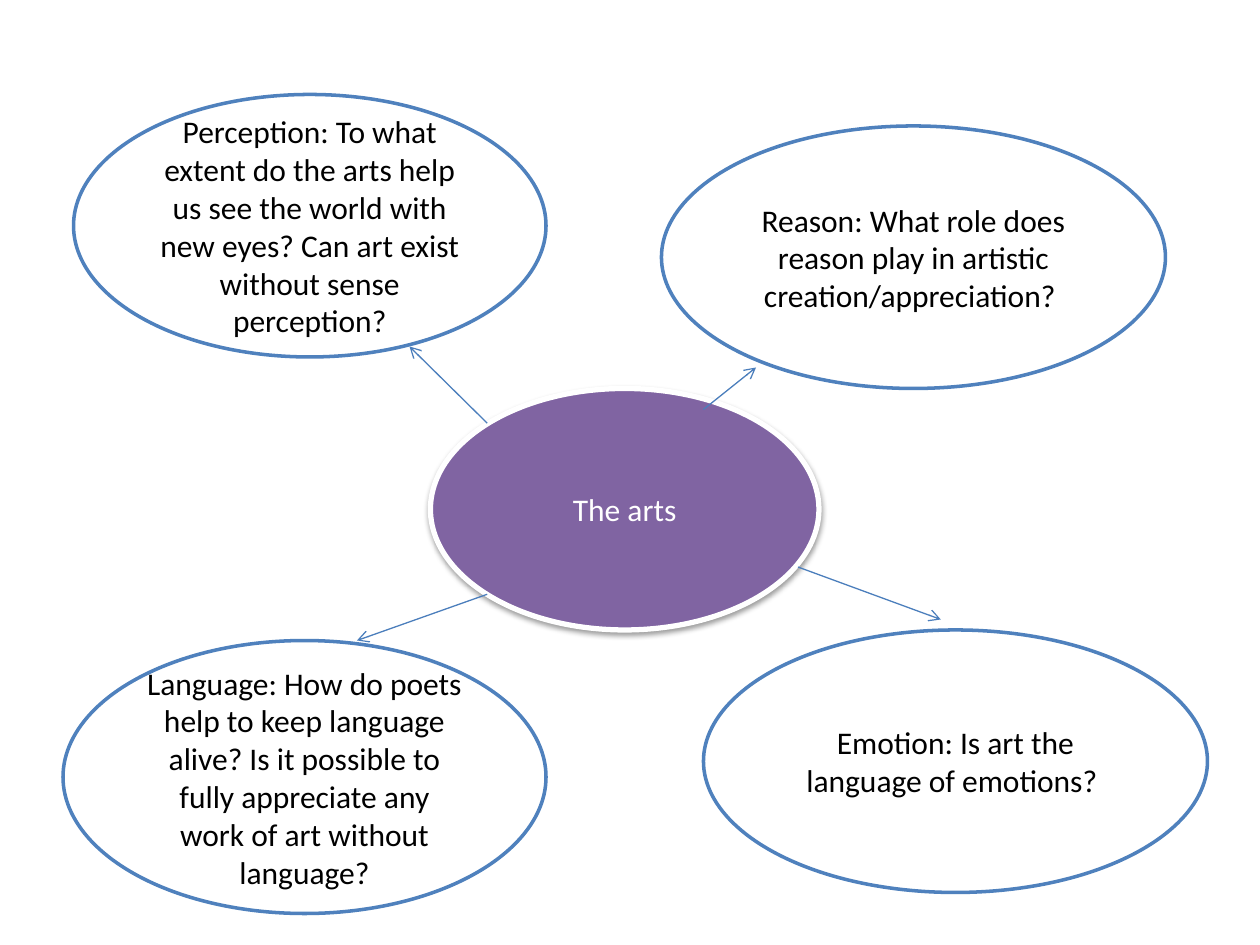
import pptx
import pptx.dml.color
import pptx.enum.shapes
import pptx.enum.text
import pptx.oxml
import pptx.oxml.ns
import pptx.util

COLUMNS, ROWS = 120, 90
SLIDE_WIDTH = pptx.util.Inches(10)
SLIDE_HEIGHT = pptx.util.Inches(7.5)
WHITE, BLACK, BLUE, PURPLE = "FFFFFF", "000000", "4F81BD", "8064A2"
ARROW_BLUE = "4B7EBC"
NAMESPACE = pptx.oxml.ns.nsdecls("a")

QUESTIONS = [
    ((7, 9, 45, 25), "Perception: To what extent do the arts help us see the world "
                     "with new eyes? Can art exist without sense perception?"),
    ((63, 12, 48, 25), "Reason: What role does reason play in artistic "
                       "creation/appreciation? "),
    ((6, 61, 46, 26), "Language: How do poets help to keep language alive? Is it "
                      "possible to fully appreciate any work of art without language?"),
    ((67, 60, 48, 25), "Emotion: Is art the language of emotions? "),
]
ARROWS = [
    ((67, 39), (72, 35)),
    ((46.4, 40.3), (39, 33)),
    ((46.4, 56.6), (34, 61)),
    ((76, 54), (89.6, 59)),
]


def color(value):
    return pptx.dml.color.RGBColor.from_string(value)


def across(columns):
    return round(SLIDE_WIDTH * columns / COLUMNS)


def down(rows):
    return round(SLIDE_HEIGHT * rows / ROWS)


def write_text(shape, text, *, size=18, font="Calibri", fill=BLACK):
    frame = shape.text_frame
    frame.word_wrap = True
    frame.vertical_anchor = pptx.enum.text.MSO_ANCHOR.MIDDLE
    paragraph = frame.paragraphs[0]
    paragraph.alignment = pptx.enum.text.PP_ALIGN.CENTER
    run = paragraph.add_run()
    run.text = text
    run.font.size = pptx.util.Pt(size)
    run.font.name = font
    run.font.color.rgb = color(fill)


def add_ellipse(slide, box, fill, line, line_width):
    left, top, width, height = box
    shape = slide.shapes.add_shape(
        pptx.enum.shapes.MSO_SHAPE.OVAL,
        across(left), down(top), across(width), down(height))
    shape.shadow.inherit = False
    shape.fill.solid()
    shape.fill.fore_color.rgb = color(fill)
    shape.line.color.rgb = color(line)
    shape.line.width = pptx.util.Pt(line_width)
    return shape


def add_shadow(shape):
    effects = shape._element.spPr.find(pptx.oxml.ns.qn("a:effectLst"))
    effects.append(pptx.oxml.parse_xml(
        f'<a:outerShdw {NAMESPACE} blurRad="40000" dist="20000" dir="5400000" '
        f'rotWithShape="0"><a:srgbClr val="{BLACK}"><a:alpha val="38000"/>'
        '</a:srgbClr></a:outerShdw>'))


def add_arrow(slide, start, end):
    connector = slide.shapes.add_connector(
        pptx.enum.shapes.MSO_CONNECTOR.STRAIGHT,
        across(start[0]), down(start[1]), across(end[0]), down(end[1]))
    connector.line.color.rgb = color(ARROW_BLUE)
    connector.line.width = pptx.util.Pt(0.75)
    connector.line._get_or_add_ln().append(
        pptx.oxml.parse_xml(f'<a:tailEnd {NAMESPACE} type="arrow"/>'))
    connector._element.spPr.append(
        pptx.oxml.parse_xml(f'<a:effectLst {NAMESPACE}/>'))


def main():
    presentation = pptx.Presentation()
    presentation.slide_width = SLIDE_WIDTH
    presentation.slide_height = SLIDE_HEIGHT
    slide = presentation.slides.add_slide(presentation.slide_layouts[6])

    topic = add_ellipse(slide, (41, 37, 37, 23), PURPLE, WHITE, 3)
    add_shadow(topic)
    write_text(topic, "The arts", fill=WHITE)
    for box, question in QUESTIONS:
        write_text(add_ellipse(slide, box, WHITE, BLUE, 2), question)
    for start, end in ARROWS:
        add_arrow(slide, start, end)

    presentation.save("out.pptx")


if __name__ == "__main__":
    main()
